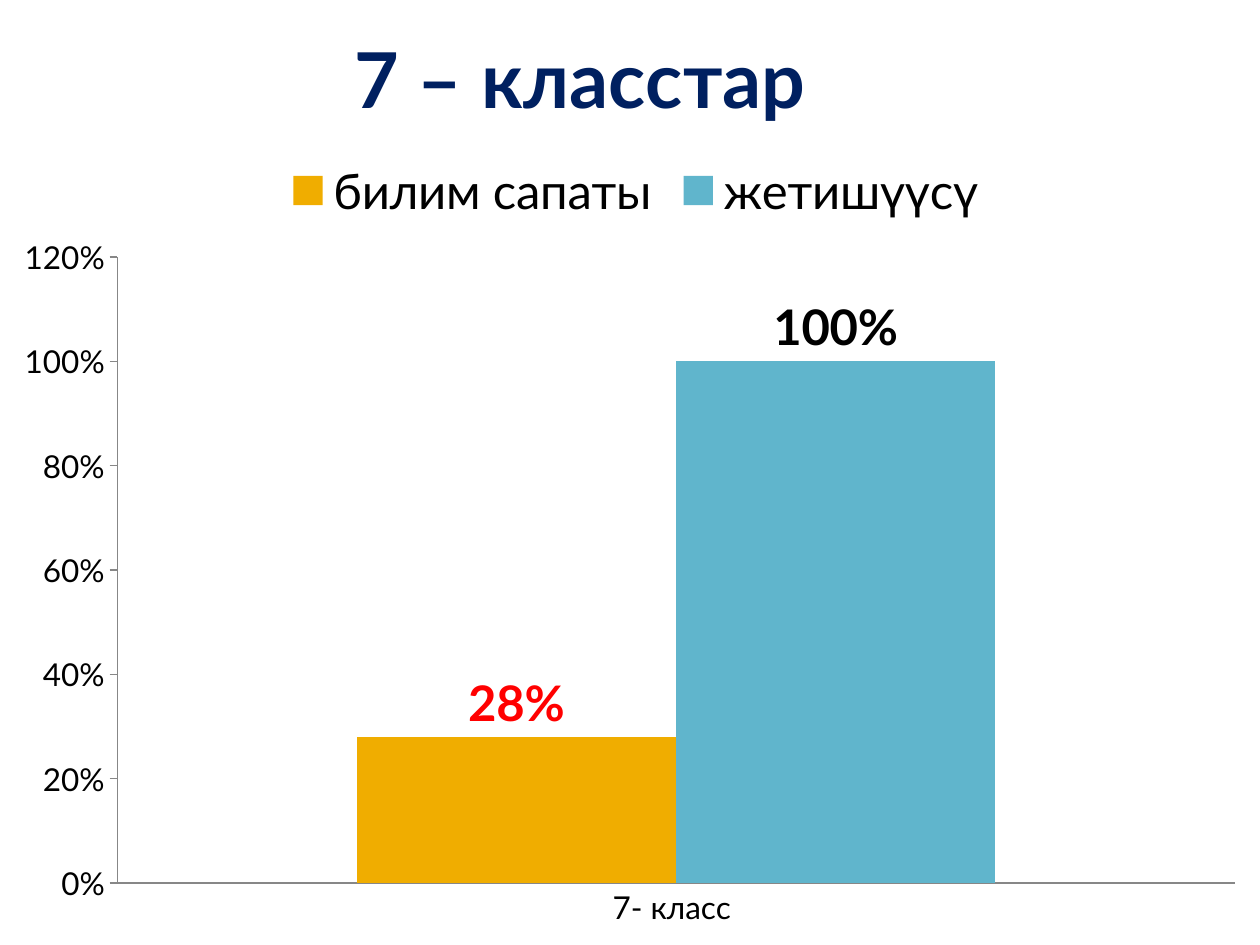
from dataclasses import dataclass

import pptx
import pptx.chart.data
import pptx.dml.color
import pptx.enum.chart
import pptx.oxml
import pptx.oxml.ns
import pptx.util
from pptx.util import Inches


@dataclass(frozen=True)
class Theme:
    font: str = "Lato"
    text: str = "000000"
    title: str = "002060"
    axis: str = "878787"
    quality: str = "F0AD00"
    quality_label: str = "FF0000"
    success: str = "60B5CC"
    body_size: int = 18
    large_size: int = 28
    title_size: int = 44


THEME = Theme()
SERIES = (
    ("билим сапаты", 0.28, THEME.quality, THEME.quality_label),
    ("жетишүүсү", 1, THEME.success, THEME.text),
)


def rgb(value):
    return pptx.dml.color.RGBColor.from_string(value)


def set_attributes(target, values):
    for name, value in values.items():
        setattr(target, name, value)


def format_font(font, size, color, bold=False):
    set_attributes(font, {"name": THEME.font, "size": pptx.util.Pt(size), "bold": bold})
    font.color.rgb = rgb(color)


def set_layout(chart, tag, index, modes, lengths):
    """Place a chart part; each length is paired with the chart side it is measured along."""
    qn = pptx.oxml.ns.qn
    parent = chart.element.find(".//" + qn(tag))
    layout = parent.find(qn("c:layout"))
    if layout is not None:
        parent.remove(layout)
    values = modes | {name: length / side for name, (length, side) in lengths.items()}
    items = "".join(f'<c:{name} val="{value}"/>' for name, value in values.items())
    parent.insert(index, pptx.oxml.parse_xml(
        f'<c:layout {pptx.oxml.ns.nsdecls("c")}>'
        f"<c:manualLayout>{items}</c:manualLayout></c:layout>"))


def format_title(chart):
    chart.has_title = True
    frame = chart.chart_title.text_frame
    run = frame.paragraphs[0].add_run()
    run.text = "7 – класстар"
    format_font(run.font, THEME.title_size, THEME.title, bold=True)
    chart.chart_title.include_in_layout = False


def format_axes(chart):
    tick_mark = pptx.enum.chart.XL_TICK_MARK
    settings = (
        (chart.category_axis, {"major_tick_mark": tick_mark.NONE}),
        (chart.value_axis, {"major_tick_mark": tick_mark.OUTSIDE, "minimum_scale": 0,
                            "maximum_scale": 1.2, "major_unit": 0.2}),
    )
    for axis, values in settings:
        set_attributes(axis, {"has_major_gridlines": False,
                              "minor_tick_mark": tick_mark.NONE, **values})
        axis.format.line.color.rgb = rgb(THEME.axis)
        axis.format.line.width = pptx.util.Pt(0.75)
        format_font(axis.tick_labels.font, THEME.body_size, THEME.text)
    set_attributes(chart.value_axis.tick_labels,
                   {"number_format": "0%", "number_format_is_linked": False})


def format_series(plot):
    set_attributes(plot, {"gap_width": 150, "overlap": 0, "vary_by_categories": False})
    for series, (_, _, fill, label_color) in zip(plot.series, SERIES):
        series.format.fill.solid()
        series.format.fill.fore_color.rgb = rgb(fill)
        labels = series.data_labels
        set_attributes(labels, {
            "show_value": True, "number_format": "0%", "number_format_is_linked": False,
            "position": pptx.enum.chart.XL_LABEL_POSITION.OUTSIDE_END})
        format_font(labels.font, THEME.large_size, label_color, bold=True)


def format_legend(chart):
    chart.has_legend = True
    set_attributes(chart.legend, {
        "position": pptx.enum.chart.XL_LEGEND_POSITION.TOP, "include_in_layout": False})
    format_font(chart.legend.font, THEME.large_size, THEME.text)


def place_parts(chart, width, height):
    edge = {"xMode": "edge", "yMode": "edge"}
    set_layout(chart, "c:title", 1, edge,
               {"x": (Inches(2.7), width), "y": (Inches(0.07), height)})
    set_layout(chart, "c:legend", 1, edge,
               {"x": (Inches(2.2), width), "y": (Inches(1.2), height)})
    set_layout(chart, "c:plotArea", 0, {"layoutTarget": "inner", **edge},
               {"x": (Inches(0.93), width), "y": (Inches(2.04), height),
                "w": (Inches(8.87), width), "h": (Inches(4.97), height)})


def add_results_chart(slide, left, top, width, height):
    data = pptx.chart.data.CategoryChartData(number_format="0%")
    data.categories = ["7- класс "]
    for name, value, _, _ in SERIES:
        data.add_series(name, [value])
    chart = slide.shapes.add_chart(pptx.enum.chart.XL_CHART_TYPE.COLUMN_CLUSTERED,
                                   left, top, width, height, data).chart
    format_font(chart.font, THEME.body_size, THEME.text)
    format_title(chart)
    format_legend(chart)
    format_axes(chart)
    format_series(chart.plots[0])
    place_parts(chart, width, height)


def main():
    presentation = pptx.Presentation()
    set_attributes(presentation, {"slide_width": Inches(10), "slide_height": Inches(7.5)})
    slide = presentation.slides.add_slide(presentation.slide_layouts.get_by_name("Blank"))
    add_results_chart(slide, 0, 0, presentation.slide_width, presentation.slide_height)
    presentation.save("out.pptx")


if __name__ == "__main__":
    main()
